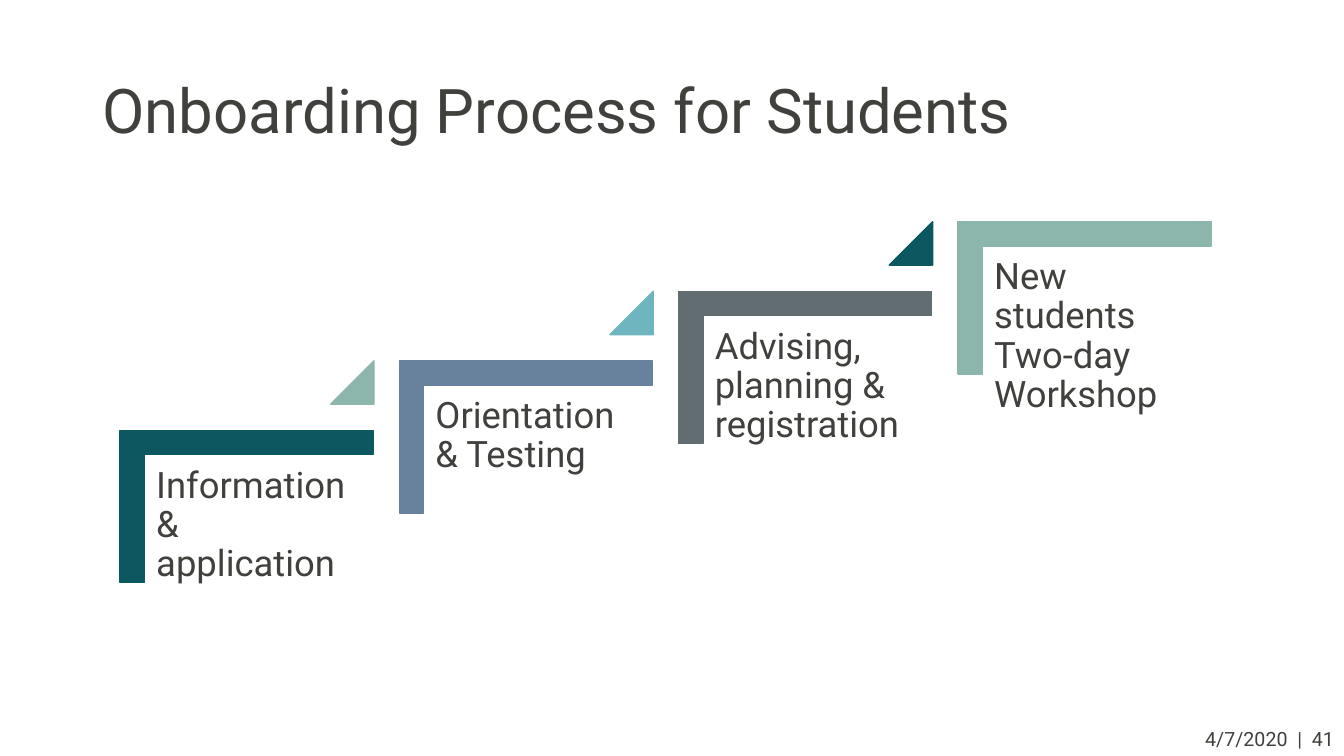
from pptx import Presentation
from pptx import util as u
from pptx.dml.color import RGBColor
from pptx.enum import shapes, text

THEME = {
    "font": "Roboto", "ink": "40403D",
    "title": 44, "step": 26, "footer": 14,
    "teal": "0D5761", "sage": "8CB5AB", "blue": "68829E",
    "aqua": "6FB5BF", "slate": "626D71",
}

prs = Presentation()
prs.slide_width, prs.slide_height = u.Inches(13.33), u.Inches(7.5)
s = prs.slides.add_slide(prs.slide_layouts[6])


def add_text(box, words, size, inset=(0.1, 0.05), spacing=0.9):
    sp = s.shapes.add_textbox(*[u.Inches(v) for v in box])
    tf = sp.text_frame
    tf.word_wrap = True
    tf.margin_left = tf.margin_right = u.Inches(inset[0])
    tf.margin_top = tf.margin_bottom = u.Inches(inset[1])
    p = tf.paragraphs[0]
    p.text = words
    p.line_spacing = spacing
    r = p.runs[0]
    r.font.name, r.font.size = THEME["font"], u.Pt(THEME[size])
    r.font.color.rgb = RGBColor.from_string(THEME["ink"])
    return tf


def add_solid(kind, box, color, adjustments):
    sp = s.shapes.add_shape(kind, *[u.Inches(v) for v in box])
    sp.shadow.inherit = False
    sp.fill.solid()
    sp.fill.fore_color.rgb = sp.line.color.rgb = RGBColor.from_string(THEME[color])
    sp.line.width = u.Pt(1)
    for i, value in enumerate(adjustments):
        sp.adjustments[i] = value
    return sp


# Title
title = add_text((0.92, 0.4, 11.5, 1.45), "Onboarding Process for Students", "title")
title.vertical_anchor = text.MSO_ANCHOR.MIDDLE

# Rising steps: each one moves right by one column and up by one row
LEFT, TOP, COLUMN, ROW = 1.69, 3.77, 2.77, 0.69
steps = [
    ("Information & application", "teal", "sage"),
    ("Orientation & Testing", "blue", "aqua"),
    ("Advising, planning & registration", "slate", "teal"),
    ("New students Two-day Workshop", "sage", None),
]
for i, (label, bracket_color, marker_color) in enumerate(steps):
    x, y = LEFT + i * COLUMN, TOP - i * ROW
    bracket = add_solid(shapes.MSO_SHAPE.CORNER, (x, y, 1.51, 2.51),
                        bracket_color, (0.16, 0.16))
    bracket.rotation = 90
    add_text((x - 0.25, y + 0.75, 2.26, 1.99), label, "step", (0.11, 0.11))
    if marker_color:
        add_solid(shapes.MSO_SHAPE.ISOSCELES_TRIANGLE,
                  (x + 1.59, y - 0.19, 0.43, 0.43), marker_color, (1,))

# Date and page number
footer = add_text((11.62, 7.16, 1.71, 0.34), "4/7/2020  |  41", "footer", spacing=1.0)
footer.paragraphs[0].alignment = text.PP_ALIGN.RIGHT

prs.save("out.pptx")
